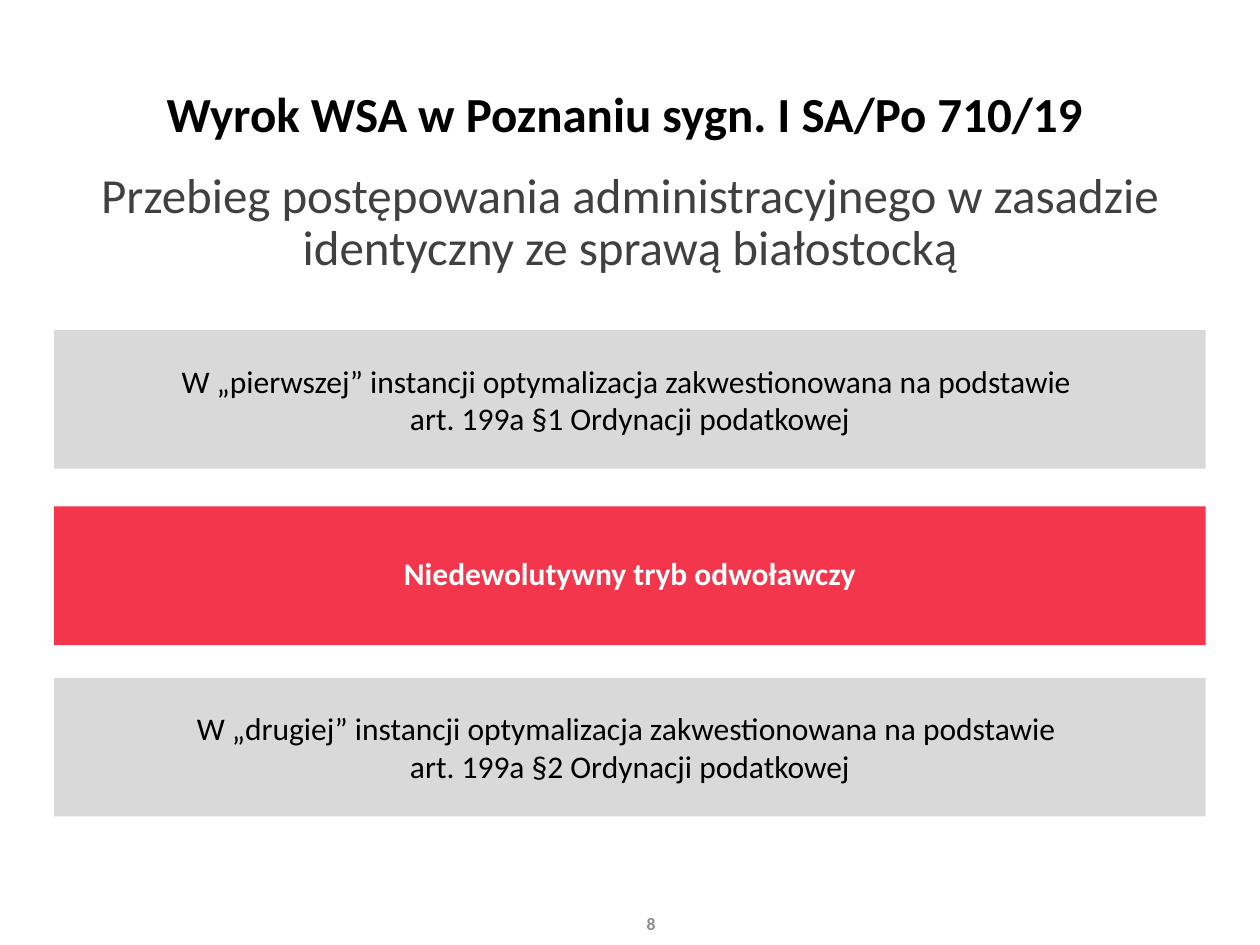
"""Builds a slide on a Poznań court ruling with three stacked statement bars."""
from dataclasses import dataclass

from pptx import Presentation
from pptx.dml import color
from pptx.enum import shapes, text
from pptx.util import Inches, Pt


@dataclass(frozen=True)
class Theme:
    font: str = "Calibri"
    black: str = "000000"
    dark: str = "404040"
    muted: str = "8C8C8C"
    white: str = "FFFFFF"
    grey: str = "D9D9D9"
    red: str = "F4364C"
    heading: int = 28
    body: int = 18
    number: int = 10


theme = Theme()


def write(shape, lines, size, ink, bold=False, spacing=1.0, align=text.PP_ALIGN.CENTER):
    frame = shape.text_frame
    frame.word_wrap = True
    frame.vertical_anchor = text.MSO_ANCHOR.MIDDLE
    for index, line in enumerate(lines):
        paragraph = frame.add_paragraph() if index else frame.paragraphs[0]
        paragraph.alignment = align
        paragraph.line_spacing = spacing
        run = paragraph.add_run()
        run.text = line
        run.font.name = theme.font
        run.font.size = Pt(size)
        run.font.bold = bold
        run.font.color.rgb = color.RGBColor.from_string(ink)


presentation = Presentation()
presentation.slide_width = Inches(10)
presentation.slide_height = Inches(7.5)
slide = presentation.slides.add_slide(presentation.slide_layouts[6])

title = slide.shapes.add_textbox(Inches(0), Inches(0.61), Inches(10), Inches(0.68))
title.text_frame.margin_top = Inches(0)
write(title, ["Wyrok WSA w Poznaniu sygn. I SA/Po 710/19 "],
      theme.heading, theme.black, bold=True, spacing=0.9)

page_number = slide.shapes.add_textbox(Inches(4.7), Inches(7.13), Inches(0.6), Inches(0.4))
write(page_number, ["8"], theme.number, theme.muted, bold=True, align=text.PP_ALIGN.RIGHT)

subtitle = slide.shapes.add_textbox(Inches(0), Inches(1.04), Inches(10), Inches(1.47))
write(subtitle,
      ["Przebieg postępowania administracyjnego w zasadzie identyczny ze sprawą białostocką"],
      theme.heading, theme.dark, spacing=0.9)

bars = [
    (2.62, theme.grey, theme.black, False,
     ["W „pierwszej” instancji optymalizacja zakwestionowana na podstawie ",
      "art. 199a §1 Ordynacji podatkowej"]),
    (4.02, theme.red, theme.white, True, ["Niedewolutywny tryb odwoławczy"]),
    (5.38, theme.grey, theme.black, False,
     ["W „drugiej” instancji optymalizacja zakwestionowana na podstawie ",
      "art. 199a §2 Ordynacji podatkowej"]),
]
for top, fill, ink, bold, lines in bars:
    bar = slide.shapes.add_shape(shapes.MSO_SHAPE.RECTANGLE, Inches(0.43), Inches(top),
                                 Inches(9.14), Inches(1.1))
    bar.shadow.inherit = False
    bar.fill.solid()
    bar.fill.fore_color.rgb = color.RGBColor.from_string(fill)
    bar.line.fill.background()
    write(bar, lines, theme.body, ink, bold, spacing=0.9 if bold else 1.0)

presentation.save("out.pptx")
